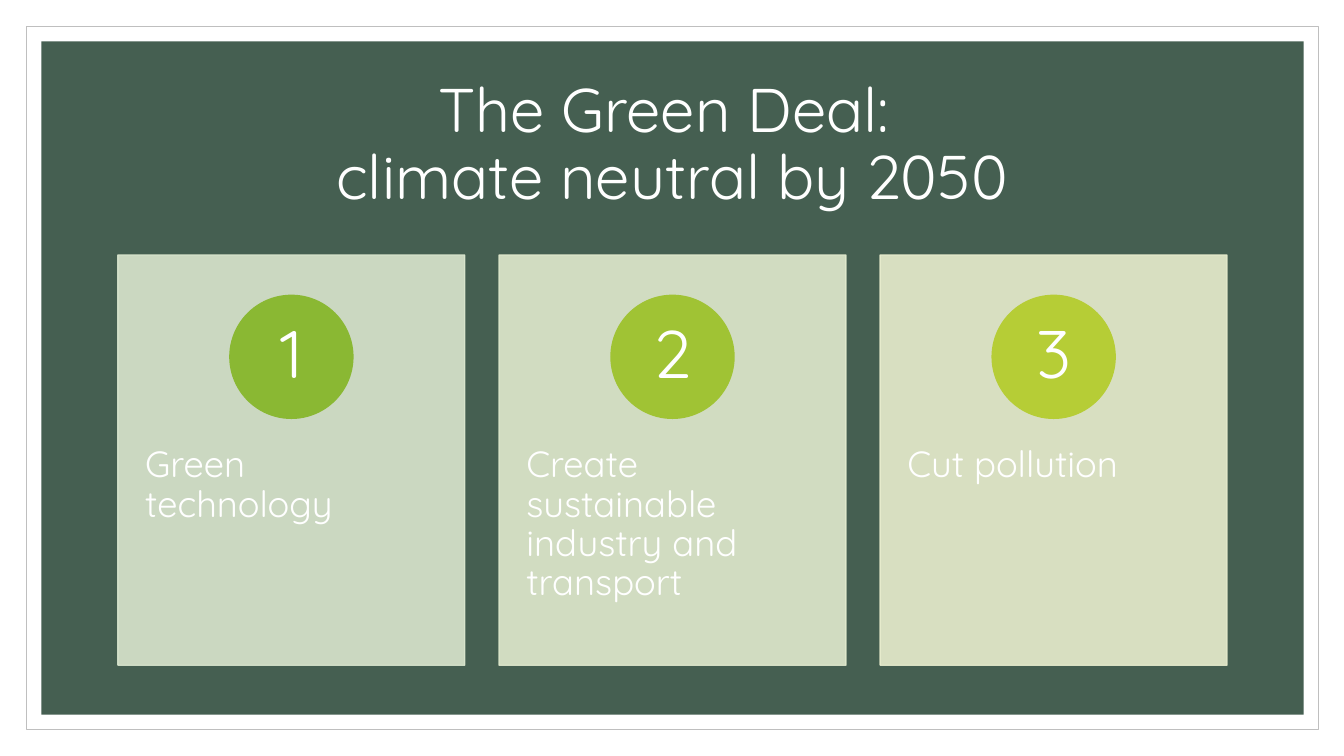
from dataclasses import dataclass

import lxml.etree
import pptx
import pptx.dml.color
import pptx.enum.shapes
import pptx.enum.text
import pptx.oxml.ns
import pptx.util

Inches = pptx.util.Inches
Shape = pptx.enum.shapes.MSO_SHAPE
Align = pptx.enum.text.PP_ALIGN
Anchor = pptx.enum.text.MSO_ANCHOR

FONT = "Quicksand"
COLORS = {
    "white": "FFFFFF", "border": "BFBFBF", "panel": "455F51",
    "card1": "DAE6CE", "card2": "E1EACE", "card3": "E8EDCE",
    "badge1": "8AB833", "badge2": "A0C334", "badge3": "B6CD36",
}
CARD_LEFT, CARD_TOP, CARD_W, CARD_H, CARD_STEP = 1.17, 2.53, 3.44, 4.07, 3.78
BADGE_TOP, BADGE_SIZE = 2.93, 1.22
LABEL_TOP, LABEL_H = 4.07, 2.44


@dataclass
class Box:
    left: float
    top: float
    width: float
    height: float

    def emu(self) -> list[int]:
        return [Inches(v) for v in (self.left, self.top, self.width, self.height)]


@dataclass
class Card:
    number: int
    label: str


CARDS = [
    Card(1, "Green technology"),
    Card(2, "Create sustainable industry and transport"),
    Card(3, "Cut pollution"),
]


def rgb(name: str) -> pptx.dml.color.RGBColor:
    return pptx.dml.color.RGBColor.from_string(COLORS[name])


def add_filled(shapes, kind, box: Box, fill: str, line: str | None = None,
               line_pt: float = 1, opacity: int = 100):
    """Draw a solid preset shape, optionally outlined and see-through."""
    sp = shapes.add_shape(kind, *box.emu())
    sp.shadow.inherit = False
    sp.fill.solid()
    sp.fill.fore_color.rgb = rgb(fill)
    if line:
        sp.line.color.rgb = rgb(line)
        sp.line.width = pptx.util.Pt(line_pt)
    else:
        sp.line.fill.background()
    if opacity < 100:
        for clr in sp.element.spPr.iter(pptx.oxml.ns.qn("a:srgbClr")):
            alpha = lxml.etree.SubElement(clr, pptx.oxml.ns.qn("a:alpha"))
            alpha.set("val", str(opacity * 1000))
    return sp


def write(sp, text: str, size: int, align, anchor, inset_x: float, inset_y: float) -> None:
    """Fill a shape with one formatted white paragraph."""
    tf = sp.text_frame
    tf.text = text
    tf.word_wrap = True
    tf.auto_size = pptx.enum.text.MSO_AUTO_SIZE.NONE
    tf.vertical_anchor = anchor
    tf.margin_left = tf.margin_right = Inches(inset_x)
    tf.margin_top = tf.margin_bottom = Inches(inset_y)
    p = tf.paragraphs[0]
    p.alignment = align
    p.line_spacing = 0.9
    for r in p.runs:
        r.font.name = FONT
        r.font.size = pptx.util.Pt(size)
        r.font.color.rgb = rgb("white")


def add_card(s, card: Card) -> None:
    """Draw a card with its numbered badge and label."""
    shapes = s.shapes.add_group_shape().shapes
    left = CARD_LEFT + (card.number - 1) * CARD_STEP
    color = f"card{card.number}"
    add_filled(shapes, Shape.RECTANGLE, Box(left, CARD_TOP, CARD_W, CARD_H),
               color, color, opacity=90)

    label = shapes.add_textbox(*Box(left, LABEL_TOP, CARD_W, LABEL_H).emu())
    write(label, card.label, 26, Align.LEFT, Anchor.TOP, 0.27, 0.36)

    color = f"badge{card.number}"
    badge_left = left + (CARD_W - BADGE_SIZE) / 2
    badge = add_filled(shapes, Shape.OVAL,
                       Box(badge_left, BADGE_TOP, BADGE_SIZE, BADGE_SIZE), color, color)
    write(badge, str(card.number), 48, Align.CENTER, Anchor.MIDDLE, 0.1, 0.01)


def main() -> None:
    prs = pptx.Presentation()
    prs.slide_width, prs.slide_height = Inches(13.33), Inches(7.5)
    s = prs.slides.add_slide(prs.slide_layouts.get_by_name("Title Only"))
    title = s.shapes.title

    # Frame and dark panel, placed behind the title
    frame = add_filled(s.shapes, Shape.RECTANGLE, Box(0.26, 0.26, 12.82, 6.98),
                       "white", "border", 0.5)
    panel = add_filled(s.shapes, Shape.RECTANGLE, Box(0.41, 0.41, 12.52, 6.68), "panel")
    for sp in (frame, panel):
        title.element.addprevious(sp.element)

    # Title
    title.left, title.top, title.width, title.height = Box(1.17, 0.7, 11, 1.5).emu()
    write(title, "The Green Deal: \vclimate neutral by 2050", 44,
          Align.CENTER, Anchor.MIDDLE, 0.1, 0.05)

    # Cards
    for card in CARDS:
        add_card(s, card)

    prs.save("out.pptx")


if __name__ == "__main__":
    main()
